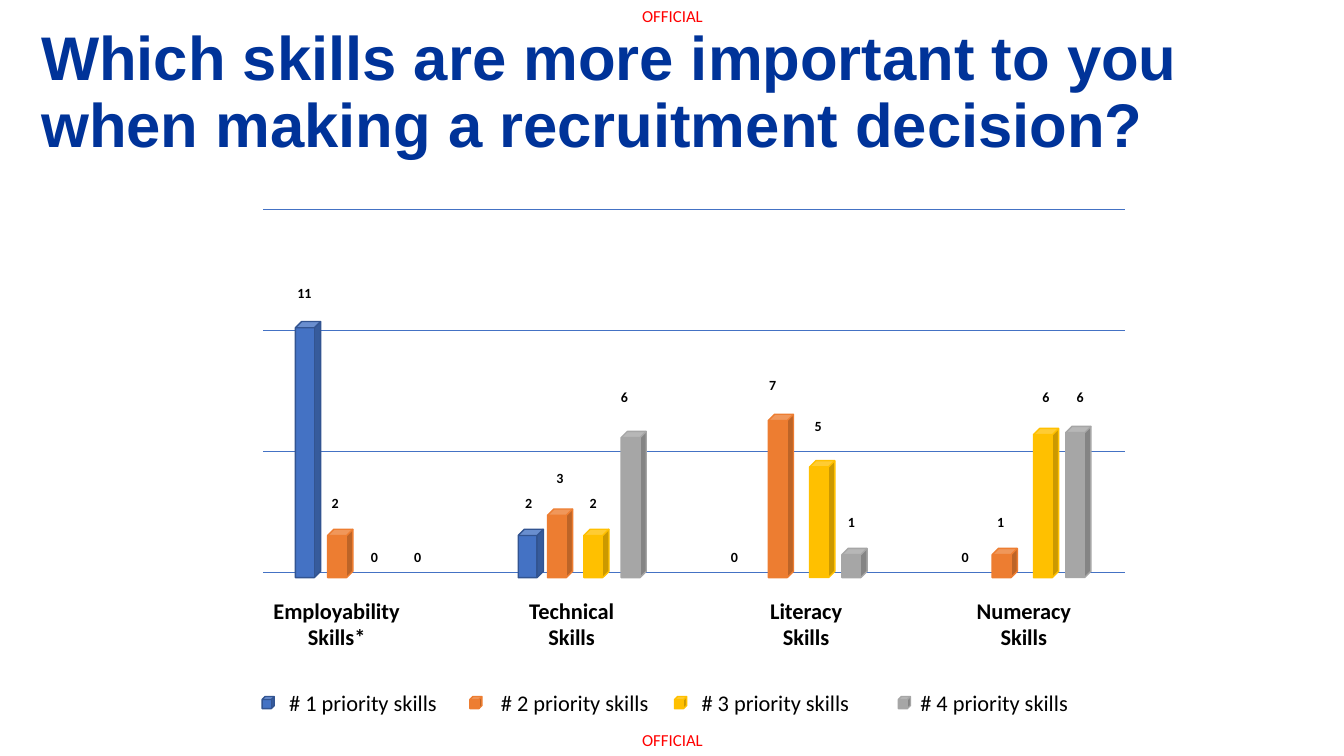
from lxml.etree import SubElement
from pptx import Presentation
from pptx.dml.color import RGBColor as Rgb
from pptx.enum.shapes import MSO_CONNECTOR as Conn, MSO_SHAPE as Shape
from pptx.enum.text import MSO_ANCHOR as Anchor, PP_ALIGN as Align
from pptx.oxml.ns import qn
from pptx.util import Inches, Pt

# Fill and edge of each priority come as a pair
COLORS = {
    "title": "003399", "mark": "FF0000", "text": "000000", "grid": "4472C4",
    "first": "4472C4", "first edge": "325491",
    "second": "ED7D31", "third": "FFC000", "fourth": "A6A6A6",
}
RANKS = ["first", "second", "third", "fourth"]
BASE = 5.73    # foot of the bars
BAR = 0.25     # width of a bar

# Group: name, left, width, then per priority:
# value, label left, label top, bar left, bar top (no bar for zero)
GROUPS = [
    ("Employability Skills*", 2.56, 1.56, [
        (11, 2.85, 2.77, 2.93, 3.19), (2, 3.19, 4.86, 3.25, 5.25),
        (0, 3.58, 5.39, None, None), (0, 4.01, 5.39, None, None)]),
    ("Technical Skills", 5.14, 1.06, [
        (2, 5.11, 4.86, 5.14, 5.25), (3, 5.42, 4.61, 5.43, 5.05),
        (2, 5.75, 4.86, 5.79, 5.25), (6, 6.06, 3.81, 6.16, 4.28)]),
    ("Literacy Skills", 7.52, 0.95, [
        (0, 7.15, 5.39, None, None), (7, 7.53, 3.69, 7.62, 4.11),
        (5, 7.98, 4.09, 8.03, 4.57), (1, 8.31, 5.05, 8.35, 5.44)]),
    ("Numeracy Skills", 9.54, 1.23, [
        (0, 9.44, 5.39, None, None), (1, 9.79, 5.05, 9.84, 5.44),
        (6, 10.24, 3.81, 10.25, 4.25), (6, 10.58, 3.81, 10.57, 4.23)]),
]
# Legend: cube left, text left, text width
LEGEND = [(2.6, 2.77, 2.28), (4.66, 4.87, 1.98),
          (6.69, 6.86, 1.81), (8.91, 9.03, 2.33)]


def write(frame, text, size=16, color="text", font="Calibri", bold=False,
          align=Align.LEFT, space=None):
    para = frame.paragraphs[0]
    para.alignment = align
    if space:
        para.line_spacing = space
    run = para.add_run()
    run.text = text
    run.font.size = Pt(size)
    run.font.name = font
    run.font.bold = bold
    run.font.color.rgb = Rgb.from_string(COLORS[color])


class Deck:
    def __init__(self):
        self.prs = Presentation()
        self.prs.slide_width = Inches(13.33)
        self.prs.slide_height = Inches(7.5)
        self.slide = self.prs.slides.add_slide(self.prs.slide_layouts[6])

    def text(self, text, x, y, w, h, anchor=Anchor.TOP, inset=None, **style):
        box = self.slide.shapes.add_textbox(*map(Inches, (x, y, w, h)))
        frame = box.text_frame
        frame.word_wrap = True
        frame.vertical_anchor = anchor
        if inset is not None:
            frame.margin_left = frame.margin_right = Inches(inset)
            frame.margin_top = frame.margin_bottom = Inches(inset)
        write(frame, text, **style)

    def cube(self, rank, x, y, w, h):
        cube = self.slide.shapes.add_shape(
            Shape.CUBE, *map(Inches, (x, y, w, h)))
        cube.shadow.inherit = False
        cube.fill.solid()
        cube.fill.fore_color.rgb = Rgb.from_string(COLORS[rank])
        edge = COLORS.get(rank + " edge", COLORS[rank])
        cube.line.color.rgb = Rgb.from_string(edge)
        cube.line.width = Pt(1)

    def rule(self, x1, x2, y):
        line = self.slide.shapes.add_connector(
            Conn.STRAIGHT, *map(Inches, (x1, y, x2, y)))
        line.line.color.rgb = Rgb.from_string(COLORS["grid"])
        line.line.width = Pt(0.5)
        SubElement(line._element.spPr, qn("a:effectLst"))


def main():
    deck = Deck()

    # Marks at the top and the foot
    for y in (0, 7.18):
        deck.text("OFFICIAL", 6.2, y, 0.94, 0.32, anchor=Anchor.MIDDLE,
                  inset=0, size=12, color="mark", align=Align.CENTER)

    # Title
    deck.text("Which skills are more important to you when making "
              "a recruitment decision?", 0.31, 0.22, 12.25, 1.43,
              anchor=Anchor.MIDDLE, size=44, color="title", font="Arial",
              bold=True, space=0.9)

    # Grid lines
    for step in range(4):
        deck.rule(2.61, 11.16, 2.08 + 1.2 * step)

    # Bars with values and group names
    for name, left, width, bars in GROUPS:
        deck.text(name, left, 5.87, width, 0.91, bold=True,
                  align=Align.CENTER)
        for rank, (value, tx, ty, x, top) in zip(RANKS, bars):
            if value:
                deck.cube(rank, x, top, BAR, BASE - top)
            deck.text(str(value), tx, ty, 0.58, 0.4, size=10, bold=True)

    # Legend
    for num, (rank, (x, tx, width)) in enumerate(zip(RANKS, LEGEND), 1):
        deck.cube(rank, x, 6.91, 0.12, 0.12)
        deck.text(f"# {num} priority skills", tx, 6.79, width, 0.37)

    deck.prs.save("out.pptx")


if __name__ == "__main__":
    main()
